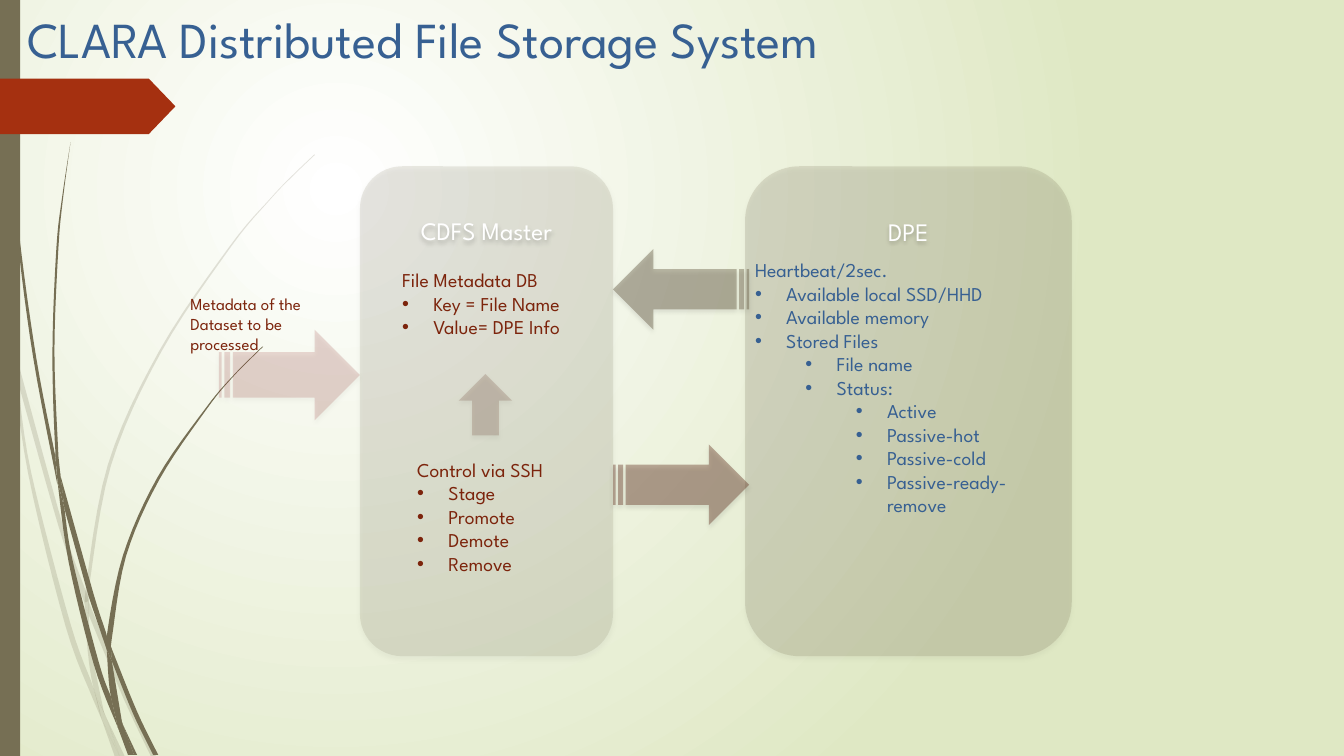
import pptx
import pptx.util
import pptx.dml.color
import pptx.enum.shapes
import pptx.enum.text
import pptx.oxml.ns
from lxml import etree

Inches = pptx.util.Inches
Pt = pptx.util.Pt
RGBColor = pptx.dml.color.RGBColor
Shape = pptx.enum.shapes.MSO_SHAPE
Align = pptx.enum.text.PP_ALIGN
Anchor = pptx.enum.text.MSO_ANCHOR
AutoSize = pptx.enum.text.MSO_AUTO_SIZE
qn = pptx.oxml.ns.qn

WHITE = RGBColor(0xFF, 0xFF, 0xFF)
PALE_GREEN = RGBColor(0xDF, 0xE8, 0xC4)
OLIVE = RGBColor(0x76, 0x6F, 0x54)
BROWN = RGBColor(0x50, 0x42, 0x28)
DARK_RED = RGBColor(0x52, 0x18, 0x08)
MAROON = RGBColor(0x80, 0x00, 0x00)
RUST = RGBColor(0xA5, 0x30, 0x10)
TEXT_RED = RGBColor(0x7C, 0x24, 0x0C)
TEXT_BLUE = RGBColor(0x37, 0x60, 0x92)
FONT = "League Spartan"
BULLET_INDENT = 0.31
LEVEL_STEP = 0.5
CURVE_STEPS = 6

TITLE = "CLARA Distributed File Storage System"

PALE_BLADES = [
    ([(0, 2.82), (0.09, 3.22), (0.11, 3.5)], [(0.1, 3.44), (0, 2.99)]),
    ([(0.14, 3.45), (0.62, 5.2), (0.85, 5.86)], [(0.84, 5.99), (0.58, 5.22), (0.17, 3.76)]),
    ([(0.88, 5.96), (0.92, 6.07), (1.27, 6.92), (1.55, 7.51)], [(1.5, 7.51), (1.23, 6.94), (0.88, 6.1)]),
    ([(1.05, 7.11), (1.24, 7.51)], [(1.19, 7.51)]),
    ([(0.11, 3.5), (0.17, 3.76), (0.31, 4.69), (0.7, 6.19), (0.93, 6.83), (1.01, 7.14)],
     [(0.92, 6.93), (0.65, 6.21), (0.28, 4.7), (0.11, 3.5)]),
    ([(0.84, 5.99), (0.87, 6.46), (0.93, 6.83), (1.05, 7.11)], [(1.03, 7.06), (0.91, 6.46), (0.88, 6.1)]),
    ([(3.12, 1.53), (2.89, 1.75), (2.68, 1.97), (2.28, 2.44), (1.58, 3.48), (1.07, 4.61), (0.85, 5.84), (0.88, 5.96)],
     [(0.88, 5.84), (1.1, 4.62), (1.6, 3.49), (2.29, 2.45), (2.68, 1.98), (2.9, 1.75), (3.12, 1.54)]),
    ([(1.01, 7.14), (1.14, 7.51)], [(1.19, 7.51)]),
    ([(0.85, 5.86), (0.88, 5.96), (0.88, 6.1)], [(0.84, 5.99)]),
    ([(0.93, 6.83), (0.96, 6.92), (1.05, 7.11), (1.19, 7.51)], [(1.01, 7.14), (0.99, 7.07)]),
]
DARK_BLADES = [
    ([(0.03, 0), (0.04, 0.48), (0.07, 1.1), (0.17, 2.33), (0.33, 3.55), (0.57, 4.81)],
     [(0.55, 4.53), (0.36, 3.55), (0.19, 2.32), (0.08, 1.09), (0.04, 0)]),
    ([(0.6, 4.72), (0.93, 5.9), (1.06, 6.31), (1.06, 6.45)], [(0.88, 5.92), (0.64, 5.05)]),
    ([(1.1, 6.41), (1.13, 6.49), (1.36, 7.06), (1.57, 7.49)], [(1.52, 7.49), (1.32, 7.08), (1.11, 6.56)]),
    ([(0.57, 4.77), (0.68, 5.57), (0.93, 6.59), (1.17, 7.22)], [(1.1, 6.91), (0.98, 6.57), (0.72, 5.56), (0.64, 5.05)]),
    ([(0.7, 1.41), (0.62, 1.93), (0.56, 2.45), (0.52, 3.49), (0.55, 4.49), (0.6, 4.72)],
     [(0.58, 4.53), (0.54, 3.49), (0.58, 2.45), (0.63, 1.93), (0.7, 1.41)]),
    ([(1.22, 7.19), (1.36, 7.49)], [(1.33, 7.49)]),
    ([(0.55, 4.49), (0.6, 4.72), (0.64, 5.05)], [(0.57, 4.77), (0.55, 4.53)]),
    ([(2.6, 3.44), (2.31, 3.73), (2.04, 4.05), (1.56, 4.74), (1.22, 5.51), (1.06, 6.31), (1.1, 6.41)],
     [(1.11, 6.33), (1.25, 5.52), (1.58, 4.76), (2.05, 4.06), (2.31, 3.74), (2.61, 3.44)]),
    ([(1.17, 7.22), (1.27, 7.49)], [(1.31, 7.49)]),
    ([(1.06, 6.45), (1.1, 6.91), (1.22, 7.19)], [(1.21, 7.16), (1.11, 6.56)]),
    ([(1.06, 6.31), (1.1, 6.41), (1.11, 6.56)], [(1.06, 6.45)]),
    ([(1.1, 6.91), (1.22, 7.19), (1.33, 7.49)], [(1.3, 7.49), (1.17, 7.22)]),
]

PANELS = [
    ("CDFS Master", (3.57, 1.65, 2.51, 4.86), OLIVE),
    ("DPE", (7.39, 1.65, 3.24, 4.86), BROWN),
]
ARROWS = [
    (Shape.STRIPED_RIGHT_ARROW, (6.08, 2.47, 1.35, 0.8), BROWN, 35, 180),
    (Shape.STRIPED_RIGHT_ARROW, (6.08, 4.41, 1.35, 0.8), DARK_RED, 35, 0),
    (Shape.UP_ARROW, (4.55, 3.71, 0.53, 0.61), DARK_RED, 17, 0),
    (Shape.STRIPED_RIGHT_ARROW, (2.17, 3.27, 1.4, 0.9), MAROON, 14, 0),
]
LISTS = [
    ((7.39, 2.51, 3.24, 2.93), True, 14, TEXT_BLUE, [
        ("Heartbeat/2sec.", None), ("Available local SSD/HHD", 0), ("Available memory", 0),
        ("Stored Files", 0), ("File name", 1), ("Status:", 1), ("Active", 2),
        ("Passive-hot", 2), ("Passive-cold", 2), ("Passive-ready-remove", 2)]),
    ((3.89, 2.61, 1.83, 1.04), False, 14, TEXT_RED, [
        ("File Metadata DB", None), ("Key = File Name", 0), ("Value= DPE Info", 0)]),
    ((4.04, 4.49, 1.47, 1.51), False, 14, TEXT_RED, [
        ("Control via SSH", None), ("Stage", 0), ("Promote", 0), ("Demote", 0), ("Remove", 0)]),
    ((1.79, 2.86, 1.32, 0.71), False, 12, TEXT_RED, [
        ("Metadata of the", None), ("Dataset to be", None), ("processed", None)]),
]


def style_font(para, size, color):
    para.font.name = FONT
    para.font.size = Pt(size)
    para.font.color.rgb = color


def paint(shape, color, opacity=100):
    shape.shadow.inherit = False
    shape.fill.solid()
    shape.fill.fore_color.rgb = color
    shape.line.fill.background()
    if opacity < 100:
        tint = shape._element.spPr.find(qn("a:solidFill"))[0]
        etree.SubElement(tint, qn("a:alpha"), val=str(opacity * 1000))


def add_shadow(shape):
    effects = shape._element.spPr.find(qn("a:effectLst"))
    shadow = etree.SubElement(effects, qn("a:outerShdw"), blurRad=str(Pt(3)), dist=str(Pt(2)),
                              dir="5400000", rotWithShape="0")
    tint = etree.SubElement(shadow, qn("a:srgbClr"), val="000000")
    etree.SubElement(tint, qn("a:alpha"), val="25000")


def add_preset(page, kind, place, color, opacity=100):
    shape = page.shapes.add_shape(kind, *map(Inches, place))
    paint(shape, color, opacity)
    return shape


def smooth_edge(points):
    padded = [points[0], *points, points[-1]]
    curve = []
    for a, b, c, d in zip(padded, padded[1:], padded[2:], padded[3:]):
        for step in range(CURVE_STEPS):
            t = step / CURVE_STEPS
            curve.append(tuple(
                0.5 * (2 * q + (r - p) * t + (2 * p - 5 * q + 4 * r - s) * t ** 2 + (3 * q - p - 3 * r + s) * t ** 3)
                for p, q, r, s in zip(a, b, c, d)))
    return curve + [points[-1]]


def add_blade(page, edges, opacity):
    outline = [(Inches(x), Inches(y)) for edge in edges for x, y in smooth_edge(edge)]
    builder = page.shapes.build_freeform(*outline[0])
    builder.add_line_segments(outline[1:], close=True)
    paint(builder.convert_to_shape(), OLIVE, opacity)


def set_background(page):
    fill = page.background.fill
    fill.gradient()
    for stop, color in zip(fill.gradient_stops, (WHITE, PALE_GREEN)):
        stop.color.rgb = color
    gradient = page._element.find(".//" + qn("a:gradFill"))
    circle = etree.Element(qn("a:path"))
    circle.set("path", "circle")
    etree.SubElement(circle, qn("a:fillToRect"), l="50000", t="50000", r="100000", b="100000")
    gradient.replace(gradient.find(qn("a:lin")), circle)


def add_title(page):
    title = page.shapes.title
    title.left, title.top, title.width, title.height = map(Inches, (0.05, 0.03, 10.81, 1.09))
    frame = title.text_frame
    frame.text = TITLE
    frame.auto_size = AutoSize.NONE
    frame.vertical_anchor = Anchor.TOP
    frame.margin_left = Inches(0.22)
    frame.paragraphs[0].alignment = Align.LEFT
    style_font(frame.paragraphs[0], 36, TEXT_BLUE)


def add_panel(page, heading, place, color):
    panel = add_preset(page, Shape.ROUNDED_RECTANGLE, place, color, 14)
    add_shadow(panel)
    frame = panel.text_frame
    frame.text = heading
    frame.vertical_anchor = Anchor.TOP
    corner_inset = 0.29 * place[2] / 6
    frame.margin_top = Inches(0.49 - corner_inset)
    frame.paragraphs[0].alignment = Align.CENTER
    style_font(frame.paragraphs[0], 18, WHITE)


def add_list(page, place, wrap, size, color, lines):
    frame = page.shapes.add_textbox(*map(Inches, place)).text_frame
    frame.word_wrap = wrap
    frame.auto_size = AutoSize.SHAPE_TO_FIT_TEXT
    for index, (text, level) in enumerate(lines):
        para = frame.add_paragraph() if index else frame.paragraphs[0]
        para.text = text
        style_font(para, size, color)
        if level is not None:
            para.level = level
            settings = para._p.get_or_add_pPr()
            settings.set("marL", str(Inches(BULLET_INDENT + LEVEL_STEP * level)))
            settings.set("indent", str(-Inches(BULLET_INDENT)))
            settings.insert(0, etree.Element(qn("a:buFont"), typeface="Arial"))
            settings.insert(1, etree.Element(qn("a:buChar"), char="•"))


deck = pptx.Presentation()
deck.slide_width, deck.slide_height = Inches(13.33), Inches(7.5)
page = deck.slides.add_slide(deck.slide_layouts[5])
set_background(page)
for blades, opacity in ((PALE_BLADES, 20), (DARK_BLADES, 100)):
    for edges in blades:
        add_blade(page, edges, opacity)
add_preset(page, Shape.RECTANGLE, (0, 0, 0.2, 7.5), OLIVE)
add_preset(page, Shape.PENTAGON, (0, 0.78, 1.74, 0.55), RUST).adjustments[0] = 0.48
add_title(page)
for panel in PANELS:
    add_panel(page, *panel)
for kind, place, color, opacity, turn in ARROWS:
    arrow = add_preset(page, kind, place, color, opacity)
    arrow.rotation = turn
    add_shadow(arrow)
for block in LISTS:
    add_list(page, *block)
deck.save("out.pptx")
